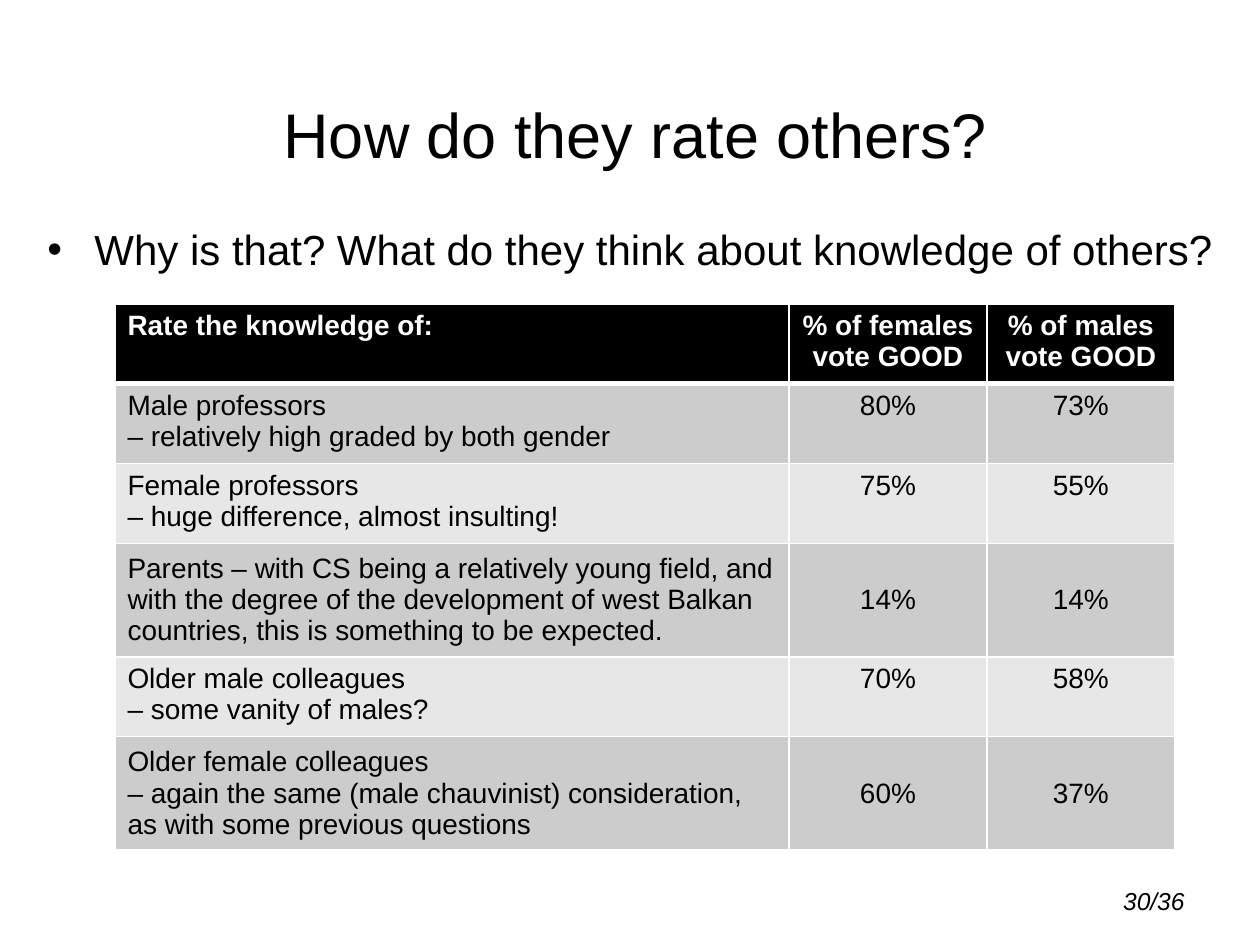
import lxml.etree
import pptx
import pptx.dml.color
import pptx.enum.text
import pptx.oxml.ns
import pptx.util

PX = 914400 / 126
FONT = "Arial"
BLACK = pptx.dml.color.RGBColor(0x00, 0x00, 0x00)
WHITE = pptx.dml.color.RGBColor(0xFF, 0xFF, 0xFF)
DARK_BAND = pptx.dml.color.RGBColor(0xCC, 0xCC, 0xCC)
LIGHT_BAND = pptx.dml.color.RGBColor(0xE7, 0xE7, 0xE7)
ALIGN = pptx.enum.text.PP_ALIGN
ANCHOR = pptx.enum.text.MSO_ANCHOR

COLUMN_WIDTHS = (674, 198, 188)
LINE_HEIGHT = 31
CELL_PADDING = 12
# Line count, question, share of females, share of males
ROWS = (
    (2, "Rate the knowledge of:", "% of females\nvote GOOD", "% of males vote GOOD"),
    (2, "Male professors\n– relatively high graded by both gender", "80%", "73%"),
    (2, "Female professors\n– huge difference, almost insulting!", "75%", "55%"),
    (3, "Parents – with CS being a relatively young field, and with the degree of "
        "the development of west Balkan countries, this is something to be expected.",
     "14%", "14%"),
    (2, "Older male colleagues\n– some vanity of males?", "70%", "58%"),
    (3, "Older female colleagues\n– again the same (male chauvinist) consideration, "
        "as with some previous questions", "60%", "37%"),
)


def px(length):
    return pptx.util.Emu(round(length * PX))


def add_child(parent, tag, **attributes):
    return lxml.etree.SubElement(parent, pptx.oxml.ns.qn(tag), **attributes)


def set_font(para, size, color=BLACK, bold=False, italic=False):
    para.font.name = FONT
    para.font.size = pptx.util.Pt(size)
    para.font.color.rgb = color
    para.font.bold = bold
    para.font.italic = italic


def add_text(page, left, top, width, height, text, align, inset_top=6):
    """Add a wrapped one-paragraph box; return its frame and paragraph."""
    box = page.shapes.add_textbox(px(left), px(top), px(width), px(height))
    frame = box.text_frame
    frame.word_wrap = True
    frame.margin_top = px(inset_top)
    para = frame.paragraphs[0]
    para.text = text
    para.alignment = align
    return frame, para


def add_title(page, left, top, width, height):
    para = add_text(page, left, top, width, height,
                    "How do they rate others?", ALIGN.CENTER, inset_top=12)[1]
    set_font(para, 36)


def add_question(page, left, top, width, height):
    para = add_text(page, left, top, width, height,
                    "Why is that? What do they think about knowledge of others?",
                    ALIGN.LEFT, inset_top=10)[1]
    properties = para._p.get_or_add_pPr()
    properties.set("marL", str(px(47)))
    properties.set("indent", str(px(-47)))
    add_child(properties, "a:buFont", typeface=FONT)
    add_child(properties, "a:buChar", char="•")
    set_font(para, 24)


def add_page_number(page, left, top, width, height):
    frame, para = add_text(page, left, top, width, height, "30/36", ALIGN.RIGHT)
    frame.vertical_anchor = ANCHOR.MIDDLE
    set_font(para, 14, italic=True)


def set_borders(cell, row):
    """Draw white 1 pt borders, with a 3 pt rule between header and body."""
    widths = {"L": 1, "R": 1, "T": 3 if row == 1 else 1, "B": 3 if row == 0 else 1}
    properties = cell._tc.get_or_add_tcPr()
    for side, width in widths.items():
        line = add_child(properties, f"a:ln{side}", w=str(pptx.util.Pt(width)))
        fill = add_child(line, "a:solidFill")
        add_child(fill, "a:srgbClr", val=str(WHITE))


def add_ratings_table(page, left, top):
    heights = [lines * LINE_HEIGHT + CELL_PADDING for lines, *_ in ROWS]
    table = page.shapes.add_table(
        len(ROWS), len(COLUMN_WIDTHS), px(left), px(top),
        px(sum(COLUMN_WIDTHS)), px(sum(heights))).table
    for column, width in zip(table.columns, COLUMN_WIDTHS):
        column.width = px(width)
    for row, (lines, *texts) in enumerate(ROWS):
        table.rows[row].height = px(heights[row])
        header = row == 0
        band = BLACK if header else DARK_BAND if row % 2 else LIGHT_BAND
        for column, text in enumerate(texts):
            cell = table.cell(row, column)
            set_borders(cell, row)
            cell.fill.solid()
            cell.fill.fore_color.rgb = band
            cell.vertical_anchor = ANCHOR.MIDDLE if lines == 3 else ANCHOR.TOP
            cell.text_frame.text = text
            for para in cell.text_frame.paragraphs:
                para.alignment = ALIGN.CENTER if column else ALIGN.LEFT
                set_font(para, 16, WHITE if header else BLACK, bold=header)


def main():
    deck = pptx.Presentation()
    deck.slide_width, deck.slide_height = px(1260), px(945)
    page = deck.slides.add_slide(deck.slide_layouts[6])
    add_title(page, 105, 84, 1061, 111)
    add_question(page, 35, 214, 1201, 665)
    add_ratings_table(page, 115, 304)
    add_page_number(page, 903, 876, 294, 50)
    deck.save("out.pptx")


if __name__ == "__main__":
    main()
